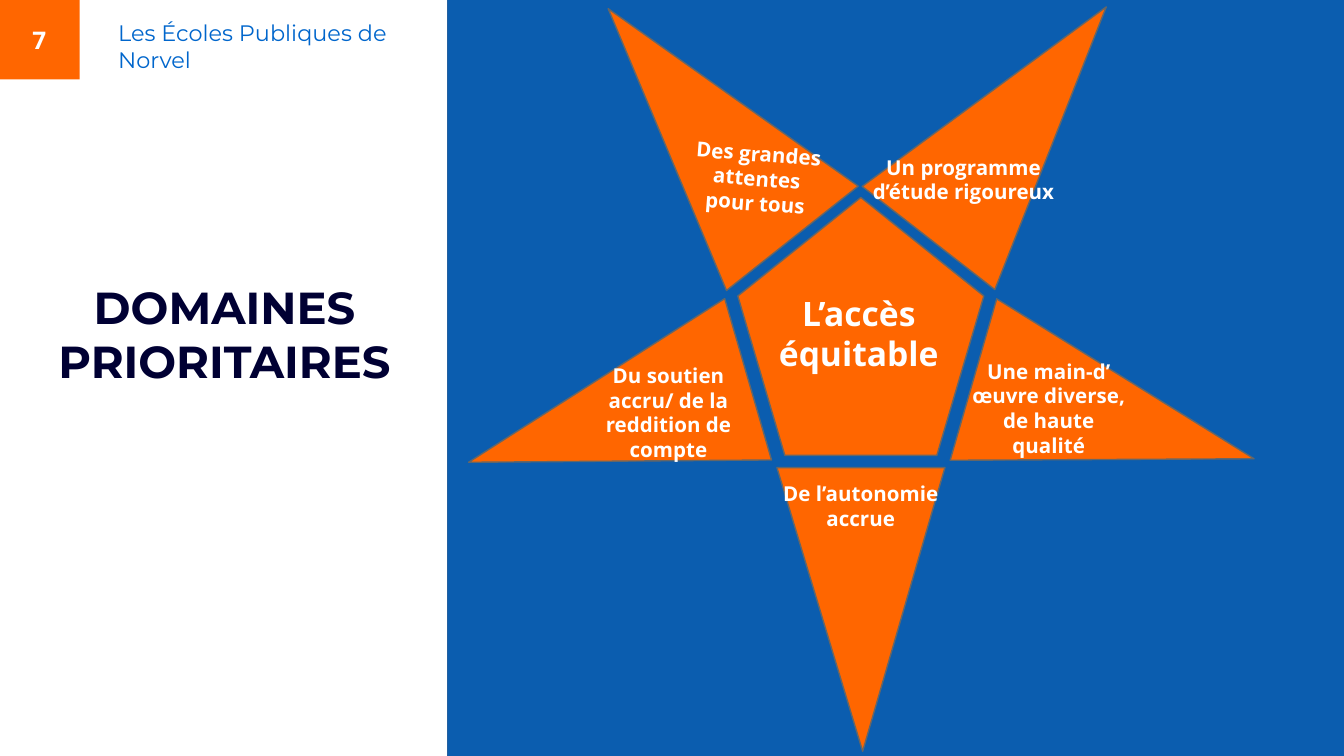
"""Build a slide with a five-point star of priority areas around a core."""
from lxml import etree
from pptx import Presentation
from pptx.dml.color import RGBColor
from pptx.enum import shapes, text
from pptx.oxml import ns
from pptx.util import Pt

WHITE = RGBColor(0xFF, 0xFF, 0xFF)
NAVY = RGBColor(0x00, 0x00, 0x33)
BLUE = RGBColor(0x00, 0x66, 0xCC)
SLATE = RGBColor(0x29, 0x46, 0x67)
ORANGE = RGBColor(0xFF, 0x66, 0x00)
GREY = RGBColor(0x66, 0x66, 0x66)

WIDE, HIGH, SPLIT = 720, 405, 239.6
BASE = 90
TITLE = ("DOMAINES PRIORITAIRES", (20.9, 161.3, 198.7, 53.3))
HEAD = ("Les Écoles Publiques de Norvel", (56.2, 2.9, 163.4, 36.7))
PAGE = ("7", (-0.5, 0, 43.2, 42.5))
CORE = ("L’accès équitable", (395.3, 105.8, 131.8, 138.2),
        (402.5, 149.8, 115.2, 51.1))
# label, centre, height, turn, label box, label turn
POINTS = [
    ("Du soutien accru/ de la reddition de compte",
     (325.8, 225), 156.2, 253.8, (303.8, 187.2, 108.7, 36.7), 0),
    ("Une main-d’ œuvre diverse, de haute qualité",
     (596.5, 225), 156.2, 106.1, (512.6, 185, 98.6, 46.8), 0),
    ("De l’autonomie accrue",
     (461.2, 326.5), 152, 180, (406.8, 250.6, 108.7, 40.3), 0),
    ("Un programme d’étude rigoureux",
     (545.4, 65.9), 156.2, 37.9, (456.2, 75.6, 120, 50.4), 0),
    ("Des grandes attentes pour tous",
     (375.5, 65.9), 157.7, 321.6, (361.4, 68.4, 88.6, 48.2), 4.3),
]

prs = Presentation()
prs.slide_width, prs.slide_height = Pt(WIDE), Pt(HIGH)
slide = prs.slides.add_slide(prs.slide_layouts[5])
tree = slide.shapes
slide.background.fill.solid()
slide.background.fill.fore_color.rgb = SLATE


def place(box):
    return [Pt(n) for n in box]


def draw(kind, box, fill, line=None):
    shape = tree.add_shape(kind, *place(box))
    shape.shadow.inherit = False
    shape.fill.solid()
    shape.fill.fore_color.rgb = fill
    if line is None:
        shape.line.fill.background()
    else:
        shape.line.color.rgb = line
        shape.line.width = Pt(0.75)
    return shape


def write(shape, words, size, font, color, bold=True,
          align=text.PP_ALIGN.CENTER, anchor=text.MSO_ANCHOR.TOP):
    frame = shape.text_frame
    frame.text = words
    frame.word_wrap = True
    frame.auto_size = text.MSO_AUTO_SIZE.NONE
    frame.vertical_anchor = anchor
    frame.margin_left = frame.margin_right = Pt(7.2)
    frame.margin_top = frame.margin_bottom = Pt(7.2)
    para = frame.paragraphs[0]
    para.alignment, para.line_spacing = align, 1.0
    face = para.runs[0].font
    face.size, face.name, face.bold = Pt(size), font, bold
    face.color.rgb = color


def label(words, box, size, turn=0):
    note = tree.add_textbox(*place(box))
    note.rotation = turn
    write(note, words, size, "Open Sans", WHITE)


RECT = shapes.MSO_SHAPE.RECTANGLE
draw(RECT, (0, 0, SPLIT, HIGH), WHITE)
panel = draw(RECT, (SPLIT, 0, WIDE - SPLIT, HIGH), BLUE)
tint = panel.fill._xPr.find(".//" + ns.qn("a:srgbClr"))
etree.SubElement(tint, ns.qn("a:alpha")).set("val", "72000")

title = tree.title
title.left, title.top, title.width, title.height = place(TITLE[1])
write(title, TITLE[0], 24, "Montserrat", NAVY, anchor=text.MSO_ANCHOR.BOTTOM)
tree._spTree.append(title._element)

badge = draw(RECT, PAGE[1], ORANGE)
write(badge, PAGE[0], 13, "Open Sans", WHITE, anchor=text.MSO_ANCHOR.MIDDLE)
head = tree.add_textbox(*place(HEAD[1]))
write(head, HEAD[0], 12, "Montserrat", BLUE, bold=False,
      align=text.PP_ALIGN.LEFT)

draw(shapes.MSO_SHAPE.REGULAR_PENTAGON, CORE[1], ORANGE, GREY)
label(CORE[0], CORE[2], 18)

for words, (x, y), tall, turn, box, tilt in POINTS:
    spike = draw(shapes.MSO_SHAPE.ISOSCELES_TRIANGLE,
                 (x - BASE / 2, y - tall / 2, BASE, tall), ORANGE, GREY)
    spike.adjustments[0] = 0.49
    spike.rotation = turn
    label(words, box, 11, tilt)

prs.save("out.pptx")
